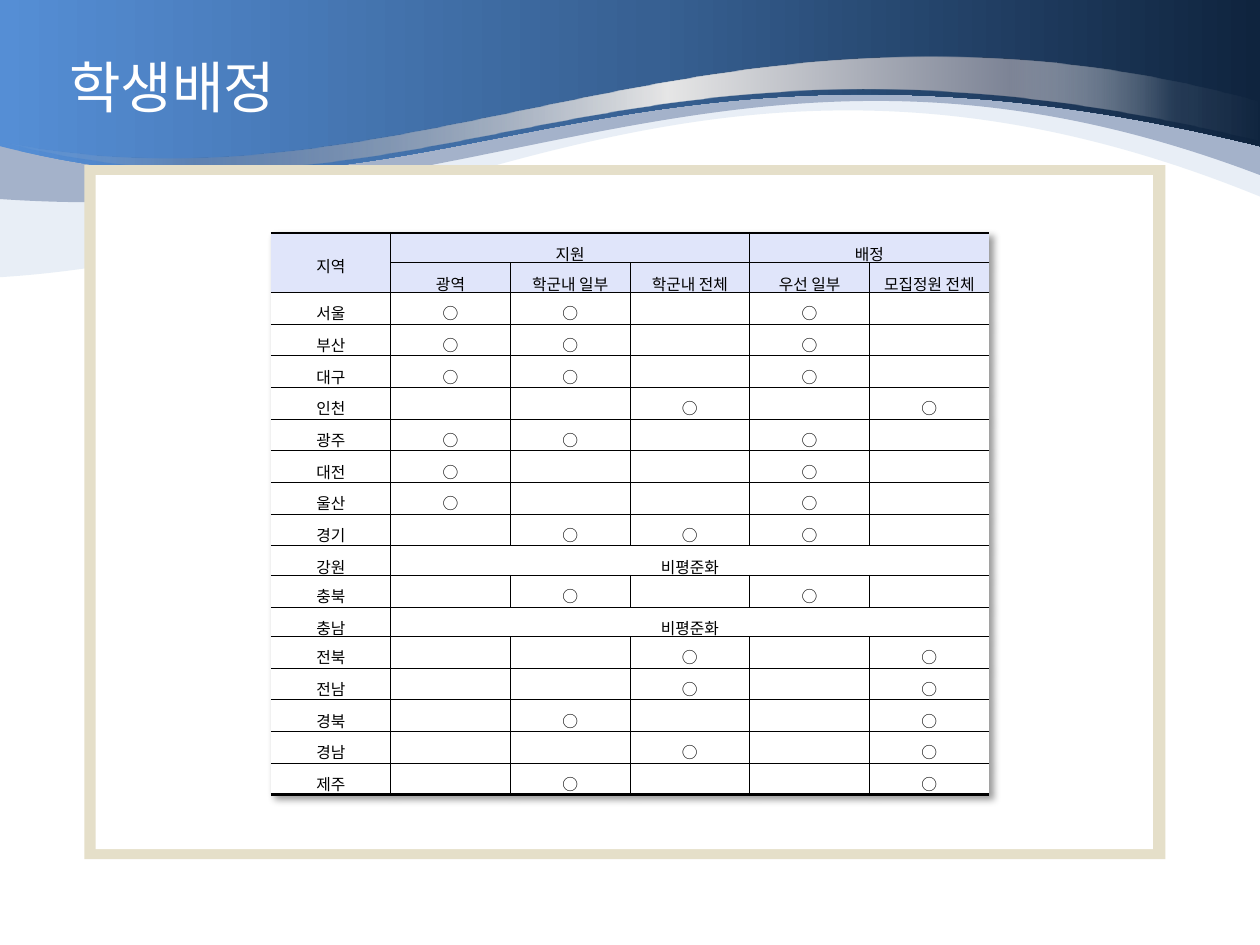
from lxml.etree import SubElement
from pptx import Presentation
from pptx.dml.color import RGBColor
from pptx.enum.shapes import MSO_SHAPE
from pptx.enum.text import MSO_ANCHOR, MSO_AUTO_SIZE, PP_ALIGN
from pptx.oxml import parse_xml
from pptx.oxml.ns import qn
from pptx.util import Inches, Pt

FONT = "Noto Sans CJK KR"
NS = 'xmlns:a="http://schemas.openxmlformats.org/drawingml/2006/main"'


def color(hex_code):
    return RGBColor.from_string(hex_code)


def style_run(run, size, hex_code):
    run.font.name = FONT
    run.font.size = Pt(size)
    run.font.color.rgb = color(hex_code)
    SubElement(run.font._element, qn("a:ea"), typeface=FONT)


prs = Presentation()
prs.slide_width, prs.slide_height = Inches(10), Inches(7.5)
slide = prs.slides.add_slide(prs.slide_layouts[5])
shapes = slide.shapes

waves = [
    ([(10, 1.56), (5.66, -0.21), (3.33, 1.99), (0, 2.2), (0, 0.4), (10, 0.4)], 1,
     [(0, "4F81BD", 13)]),
    ([(10, 1.39), (5.95, -0.15), (3.91, 1.85), (0, 1.58), (0, 0.24), (10, 0.24)], 1,
     [(0, "002060", 29)]),
    ([(10, 1.16), (4.85, -0.11), (3.47, 2.04), (0, 1.16), (0, -0.01), (10, -0.01)], 1,
     [(0, "558ED5", 100), (52, "376092", 100), (100, "0F243E", 100)]),
    ([(10, 1.12), (4.85, -0.14), (3.47, 2), (0, 1.12), (3.32, 1.79), (5.69, -0.36), (10, 0.81)], 2,
     [(0, "E6E6E6", 0), (15, "7D8496", 34), (53, "E6E6E6", 100),
      (80, "7D8496", 100), (93, "E6E6E6", 8), (100, "FFFFFF", 0)]),
]
for outline, curve_count, stops in waves:
    points = [(Inches(x), Inches(y)) for x, y in outline]
    builder = shapes.build_freeform(*points[0])
    builder.add_line_segments(points[1:], close=True)
    wave = builder.convert_to_shape()
    wave.shadow.inherit = False
    wave.line.fill.background()
    geometry = wave._element.spPr.find(qn("a:custGeom"))
    segments = list(geometry.iter(qn("a:lnTo")))
    for curve_index in range(curve_count):
        controls = segments[3 * curve_index:3 * curve_index + 3]
        curve = parse_xml(f"<a:cubicBezTo {NS}/>")
        controls[0].addprevious(curve)
        for control in controls:
            curve.append(control[0])
            control.getparent().remove(control)
    tints = [f'<a:srgbClr val="{tint}"><a:alpha val="{alpha * 1000}"/></a:srgbClr>'
             for _, tint, alpha in stops]
    if len(stops) == 1:
        paint = f"<a:solidFill {NS}>{tints[0]}</a:solidFill>"
    else:
        marks = "".join(f'<a:gs pos="{stop[0] * 1000}">{tint}</a:gs>' for stop, tint in zip(stops, tints))
        paint = f'<a:gradFill {NS} rotWithShape="1"><a:gsLst>{marks}</a:gsLst><a:lin ang="0" scaled="0"/></a:gradFill>'
    geometry.addnext(parse_xml(paint))

frame = shapes.add_group_shape()
for bounds, tint in [((0.67, 1.31, 8.58, 5.51), "E5DFC9"), ((0.76, 1.39, 8.39, 5.35), "FFFFFF")]:
    panel = frame.shapes.add_shape(MSO_SHAPE.RECTANGLE, *map(Inches, bounds))
    panel.shadow.inherit = False
    panel.fill.solid()
    panel.fill.fore_color.rgb = color(tint)
    panel.line.fill.background()

heading = shapes.title
shapes._spTree.append(heading._element)
heading.left, heading.top, heading.width, heading.height = map(Inches, (0.45, 0.36, 1.86, 0.64))
heading.text_frame.text = "학생배정"
heading.text_frame.word_wrap = False
heading.text_frame.auto_size = MSO_AUTO_SIZE.SHAPE_TO_FIT_TEXT
heading.text_frame.vertical_anchor = MSO_ANCHOR.MIDDLE
heading.text_frame.paragraphs[0].alignment = PP_ALIGN.LEFT
style_run(heading.text_frame.paragraphs[0].runs[0], 32, "FFFFFF")

regions = [
    ("서울", "○○-○-"), ("부산", "○○-○-"), ("대구", "○○-○-"), ("인천", "--○-○"),
    ("광주", "○○-○-"), ("대전", "○--○-"), ("울산", "○--○-"), ("경기", "-○○○-"),
    ("강원", "비평준화"), ("충북", "-○-○-"), ("충남", "비평준화"), ("전북", "--○-○"),
    ("전남", "--○-○"), ("경북", "-○--○"), ("경남", "--○-○"), ("제주", "-○--○"),
]
rows = [
    ["지역", "지원", "", "", "배정", ""],
    ["", "광역", "학군내 일부", "학군내 전체", "우선 일부", "모집정원 전체"],
]
for region, marks in regions:
    if marks == "비평준화":
        rows.append([region, marks, "", "", "", ""])
    else:
        rows.append([region] + ["" if mark == "-" else mark for mark in marks])

last_row, last_col = len(rows) - 1, len(rows[0]) - 1
assignment = shapes.add_table(
    len(rows), len(rows[0]), Inches(2.15), Inches(1.85), Inches(5.7), Inches(4.44)).table
table_props = assignment._tbl.tblPr
table_props.find(qn("a:tableStyleId")).text = "{2D5ABB26-0587-4C30-8999-92F81FD0307C}"
table_props.insert(0, parse_xml(
    f'<a:effectLst {NS}><a:outerShdw blurRad="50800" dist="38100" dir="2700000" algn="tl">'
    '<a:srgbClr val="000000"><a:alpha val="40000"/></a:srgbClr></a:outerShdw></a:effectLst>'))
for column in assignment.columns:
    column.width = Inches(0.95)
for r, row in enumerate(rows):
    short = r < 2 or "비평준화" in row
    assignment.rows[r].height = Inches(0.23) if short else Inches(3.52) // 14

merges = [(0, 0, 1, 0), (0, 1, 0, 3), (0, 4, 0, 5)]
merges += [(r, 1, r, last_col) for r, row in enumerate(rows) if "비평준화" in row]
for r1, c1, r2, c2 in merges:
    assignment.cell(r1, c1).merge(assignment.cell(r2, c2))

for r, row in enumerate(rows):
    for c, content in enumerate(row):
        cell = assignment.cell(r, c)
        if cell.is_spanned:
            continue
        right_col = c + (cell.span_width if cell.is_merge_origin else 1) - 1
        borders = {
            "L": 0.28 if c > 0 else 0,
            "R": 0.28 if right_col < last_col else 0,
            "T": 1.7 if r == 0 else 0.28,
            "B": 1.7 if r == last_row else 0.28,
        }
        cell_props = cell._tc.get_or_add_tcPr()
        for side, width in borders.items():
            if width:
                cell_props.append(parse_xml(
                    f'<a:ln{side} {NS} w="{Pt(width)}"><a:solidFill><a:srgbClr val="000000"/>'
                    f'</a:solidFill></a:ln{side}>'))
        cell.fill.solid()
        cell.fill.fore_color.rgb = color("E0E5FA" if r < 2 else "FFFFFF")
        cell.margin_left = cell.margin_right = Inches(0.02 if r == c == 0 else 0.07)
        cell.margin_top = cell.margin_bottom = Inches(0.02)
        cell.vertical_anchor = MSO_ANCHOR.MIDDLE
        paragraph = cell.text_frame.paragraphs[0]
        paragraph.alignment = PP_ALIGN.CENTER
        paragraph.line_spacing = 1.3
        if content:
            paragraph.text = content
            style_run(paragraph.runs[0], 9, "000000")
        else:
            SubElement(paragraph._p, qn("a:endParaRPr"), sz="900")

prs.save("out.pptx")
